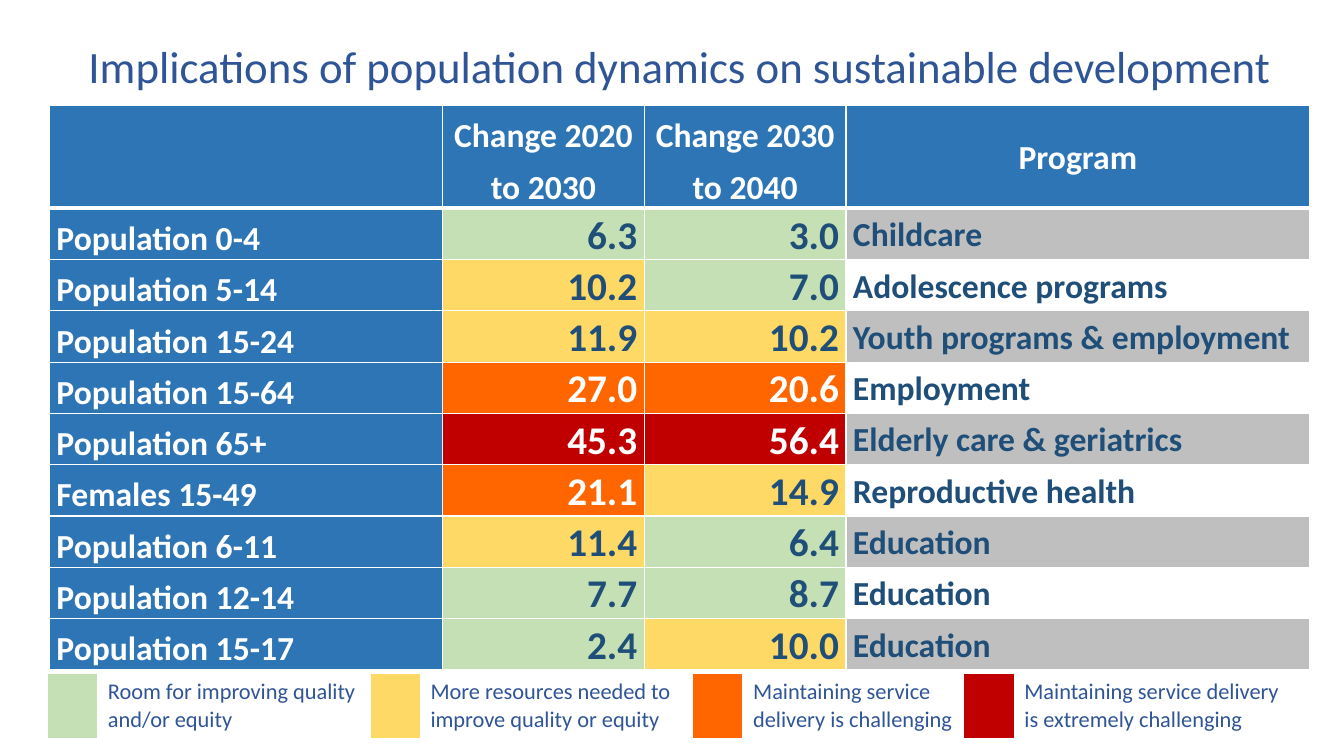
import pptx
import pptx.dml.color
import pptx.enum.text
import pptx.oxml
import pptx.oxml.ns
import pptx.util

Inches = pptx.util.Inches
RGBColor = pptx.dml.color.RGBColor
Align = pptx.enum.text.PP_ALIGN
Anchor = pptx.enum.text.MSO_ANCHOR

WHITE = RGBColor(0xFF, 0xFF, 0xFF)
TITLE_BLUE = RGBColor(0x2F, 0x55, 0x97)
HEADER_BLUE = RGBColor(0x2E, 0x75, 0xB6)
DARK_BLUE = RGBColor(0x1F, 0x4E, 0x79)
GREY = RGBColor(0xBF, 0xBF, 0xBF)
GREEN = RGBColor(0xC5, 0xE0, 0xB4)
YELLOW = RGBColor(0xFF, 0xD9, 0x66)
ORANGE = RGBColor(0xFF, 0x66, 0x00)
RED = RGBColor(0xC0, 0x00, 0x00)

HEADERS = ["", "Change 2020 to 2030", "Change 2030 to 2040", "Program"]
CHANGES = [
    ("Population 0-4", 6.3, 3.0, "Childcare"),
    ("Population 5-14", 10.2, 7.0, "Adolescence programs"),
    ("Population 15-24", 11.9, 10.2, "Youth programs & employment"),
    ("Population 15-64", 27.0, 20.6, "Employment"),
    ("Population 65+", 45.3, 56.4, "Elderly care & geriatrics"),
    ("Females 15-49", 21.1, 14.9, "Reproductive health"),
    ("Population 6-11", 11.4, 6.4, "Education"),
    ("Population 12-14", 7.7, 8.7, "Education"),
    ("Population 15-17", 2.4, 10.0, "Education"),
]
LEGEND = [
    (GREEN, "Room for improving quality and/or equity", 2.7),
    (YELLOW, "More resources needed to improve quality or equity", 2.7),
    (ORANGE, "Maintaining service delivery is challenging", 2.19),
    (RED, "Maintaining service delivery is extremely challenging", 2.89),
]


def change_colors(value):
    """Return the fill and text colours for a population change in percent."""
    if value < 10:
        return GREEN, DARK_BLUE
    if value < 20:
        return YELLOW, DARK_BLUE
    if value < 40:
        return ORANGE, WHITE
    return RED, WHITE


class SlideBuilder:
    font = "Calibri"

    def __init__(self, page):
        self.page = page

    def add_text(self, frame, text, size, color, bold=False, align=Align.LEFT, spacing=1.0):
        para = frame.paragraphs[0]
        para.alignment = align
        para.line_spacing = spacing
        span = para.add_run()
        span.text = text
        span.font.name = self.font
        span.font.size = pptx.util.Pt(size)
        span.font.bold = bold
        span.font.color.rgb = color

    def title(self, text, left, top, width, height):
        box = self.page.shapes.title
        box.left, box.top = Inches(left), Inches(top)
        box.width, box.height = Inches(width), Inches(height)
        box.text_frame.vertical_anchor = Anchor.TOP
        self.add_text(box.text_frame, text, 32, TITLE_BLUE, align=Align.CENTER)

    def table(self, left, top, widths, heights):
        frame = self.page.shapes.add_table(
            len(heights), len(widths), Inches(left), Inches(top),
            Inches(sum(widths)), Inches(sum(heights)))
        grid = frame.table
        grid.first_row = grid.horz_banding = False
        for column, width in zip(grid.columns, widths):
            column.width = Inches(width)
        for row, height in zip(grid.rows, heights):
            row.height = Inches(height)
        return grid

    def borders(self, cell, bottom=1):
        """Draw white cell borders; call before filling, as the XML order requires."""
        properties = cell._tc.get_or_add_tcPr()
        for side, width in (("L", 1), ("R", 1), ("T", 1), ("B", bottom)):
            properties.append(pptx.oxml.parse_xml(
                f'<a:ln{side} {pptx.oxml.ns.nsdecls("a")} w="{pptx.util.Pt(width)}">'
                f'<a:solidFill><a:srgbClr val="{WHITE}"/></a:solidFill></a:ln{side}>'))

    def fill(self, cell, color=None):
        if color is None:
            cell.fill.background()
        else:
            cell.fill.solid()
            cell.fill.fore_color.rgb = color

    def data_cell(self, cell, text, fill, color, size=24, align=Align.LEFT,
                  middle=True, bottom=1):
        cell.margin_left = cell.margin_right = Inches(0.07)
        cell.margin_top = cell.margin_bottom = 0
        cell.vertical_anchor = Anchor.MIDDLE if middle else Anchor.TOP
        self.borders(cell, bottom)
        self.fill(cell, fill)
        if text:
            self.add_text(cell.text_frame, text, size, color, True, align,
                          1.07 if middle else 1.25)

    def legend(self, left, top, entries):
        widths = [width for entry in entries for width in (0.5, entry[2])]
        grid = self.table(left, top, widths, [0.65])
        for index, (color, label, _) in enumerate(entries):
            swatch, caption = grid.cell(0, 2 * index), grid.cell(0, 2 * index + 1)
            self.fill(swatch, color)
            self.fill(caption)
            self.add_text(caption.text_frame, label, 16, TITLE_BLUE)

    def change_table(self, left, top):
        grid = self.table(left, top, [3.9, 2, 2, 4.6], [0.96] + [0.5] * len(CHANGES))
        for column, header in enumerate(HEADERS):
            self.data_cell(grid.cell(0, column), header, HEADER_BLUE, WHITE,
                           align=Align.CENTER, middle=header == "Program", bottom=3)
        for row, (group, first, second, program) in enumerate(CHANGES, 1):
            self.data_cell(grid.cell(row, 0), group, HEADER_BLUE, WHITE, middle=False)
            for column, value in enumerate((first, second), 1):
                fill, color = change_colors(value)
                self.data_cell(grid.cell(row, column), f"{value:.1f}", fill, color,
                               size=28, align=Align.RIGHT)
            self.data_cell(grid.cell(row, 3), program, GREY if row % 2 else None, DARK_BLUE)


def main():
    deck = pptx.Presentation()
    deck.slide_width, deck.slide_height = Inches(13.33), Inches(7.5)
    builder = SlideBuilder(deck.slides.add_slide(deck.slide_layouts[5]))
    builder.title("Implications of population dynamics on sustainable development",
                  0.52, 0.33, 12.45, 0.64)
    builder.legend(0.47, 6.68, LEGEND)
    builder.change_table(0.49, 1.05)
    deck.save("out.pptx")


if __name__ == "__main__":
    main()
